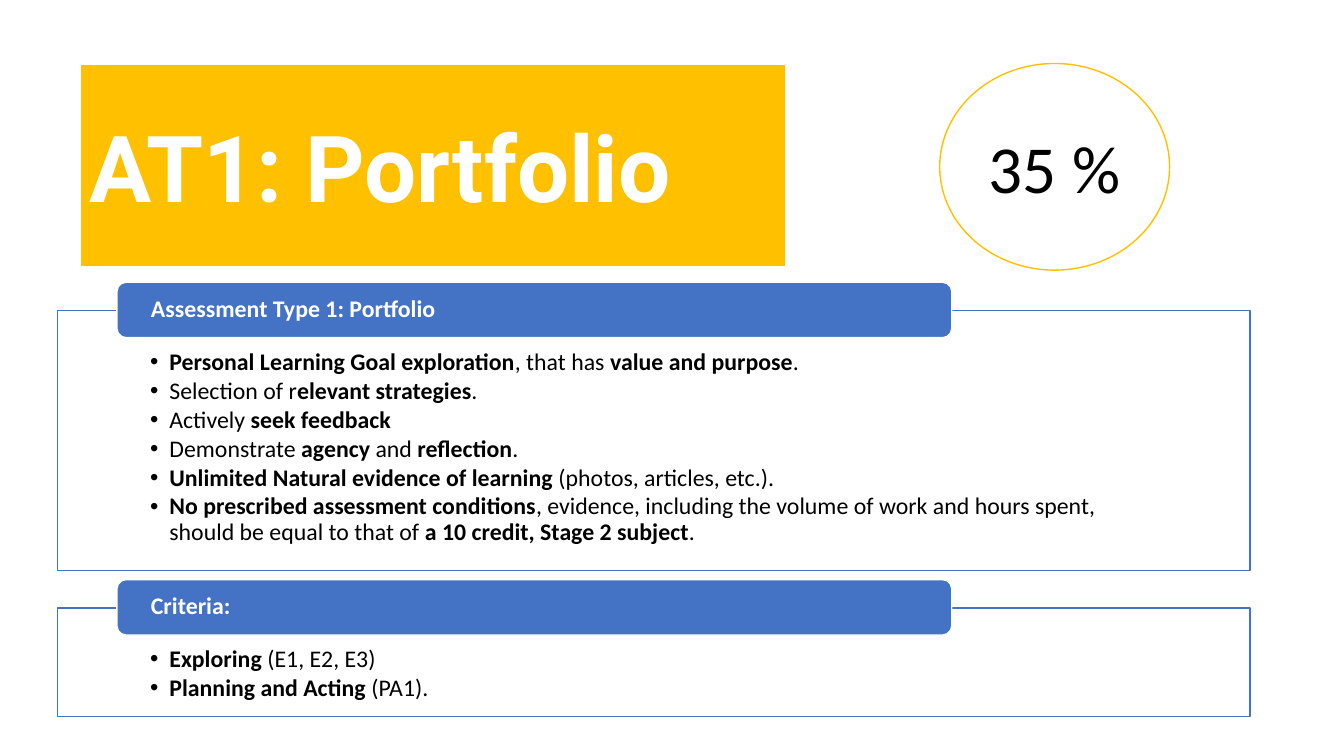
"""Build the slide that presents the portfolio assessment type."""
from dataclasses import dataclass

from lxml import etree
from pptx import Presentation
from pptx import util as u
from pptx.dml.color import RGBColor
from pptx.enum import shapes, text
from pptx.oxml.ns import qn

EMU_PER_PX = 9144
WHITE, BLACK, AMBER, BLUE = "FFFFFF", "000000", "FFC000", "4472C4"
FRAME_LEFT, FRAME_WIDTH = 57, 1183
HEADER_LEFT, HEADER_WIDTH, HEADER_HEIGHT = 116, 828, 55
HEADER_RISE = 28
BULLET_INDENT = 19


@dataclass(frozen=True)
class Section:
    """A framed list under a header; bold parts stand between double asterisks."""
    header: str
    top: int
    height: int
    points: tuple[str, ...]


SECTIONS = (
    Section("Assessment Type 1: Portfolio", 308, 258, (
        "**Personal Learning Goal exploration**, that has** value and purpose**.",
        "Selection of r**elevant strategies**.",
        "Actively **seek feedback**",
        "Demonstrate **agency** and **reflection**.",
        "**Unlimited Natural evidence of learning **(photos, articles, etc.).",
        "**No prescribed assessment conditions**, evidence, including the volume of work "
        "and hours spent, should be equal to that of **a 10 credit, Stage 2 subject**.",
    )),
    Section("Criteria:", 603, 108, (
        "**Exploring** (E1, E2, E3)",
        "**Planning and Acting **(PA1).",
    )),
)


def px(length: int) -> u.Emu:
    """Turn px, a hundred to the inch, into EMU."""
    return u.Emu(length * EMU_PER_PX)


def paint(shape, fill: str, line: str, width: float = 1) -> None:
    """Set the fill and outline of a shape."""
    shape.fill.solid()
    shape.fill.fore_color.rgb = RGBColor.from_string(fill)
    shape.line.color.rgb = RGBColor.from_string(line)
    shape.line.width = u.Pt(width)


def add_box(slide, kind, left: int, top: int, width: int, height: int, fill: str, line: str):
    """Add a preset shape without a shadow."""
    shape = slide.shapes.add_shape(kind, px(left), px(top), px(width), px(height))
    shape.shadow.inherit = False
    paint(shape, fill, line)
    return shape


def add_bullet(paragraph) -> None:
    """Give a paragraph a hanging bullet."""
    properties = paragraph._p.get_or_add_pPr()
    properties.set("marL", str(px(BULLET_INDENT)))
    properties.set("indent", str(px(-BULLET_INDENT)))
    etree.SubElement(properties, qn("a:buFont"), typeface="Arial")
    etree.SubElement(properties, qn("a:buChar"), char="•")


def write(shape, lines: tuple[str, ...], *, size: float, color: str, font: str = "Calibri",
          align=text.PP_ALIGN.LEFT, anchor=text.MSO_ANCHOR.MIDDLE,
          insets: tuple[int, int, int, int] = (10, 5, 10, 5),
          spacing: float = 1, after: float = 0, bullets: bool = False) -> None:
    """Write one paragraph per line, with marked parts in bold."""
    frame = shape.text_frame
    frame.word_wrap = True
    frame.auto_size = text.MSO_AUTO_SIZE.NONE
    frame.vertical_anchor = anchor
    frame.margin_left, frame.margin_top, frame.margin_right, frame.margin_bottom = map(px, insets)
    for index, line in enumerate(lines):
        paragraph = frame.add_paragraph() if index else frame.paragraphs[0]
        paragraph.alignment = align
        paragraph.line_spacing = spacing
        paragraph.space_after = u.Pt(after)
        if bullets:
            add_bullet(paragraph)
        for part, words in enumerate(line.split("**")):
            if words:
                run = paragraph.add_run()
                run.text = words
                run.font.name = font
                run.font.size = u.Pt(size)
                run.font.bold = part % 2 == 1
                run.font.color.rgb = RGBColor.from_string(color)


def format_title(title) -> None:
    """Turn the title placeholder into the arrow-shaped banner."""
    title.left, title.top, title.width, title.height = map(px, (79, 63, 701, 202))
    geometry = etree.SubElement(title.element.spPr, qn("a:prstGeom"), prst="homePlate")
    etree.SubElement(geometry, qn("a:avLst"))
    paint(title, AMBER, WHITE, 1.5)
    write(title, ("**AT1: Portfolio**",), size=66, color=WHITE, font="Roboto")


def add_section(slide, section: Section) -> None:
    """Add a framed bullet list and the header on its top edge."""
    frame = add_box(slide, shapes.MSO_SHAPE.RECTANGLE, FRAME_LEFT, section.top,
                    FRAME_WIDTH, section.height, WHITE, BLUE)
    write(frame, section.points, size=17, color=BLACK, anchor=text.MSO_ANCHOR.TOP,
          insets=(92, 39, 92, 13), spacing=0.9, after=2.3, bullets=True)
    header = add_box(slide, shapes.MSO_SHAPE.ROUNDED_RECTANGLE, HEADER_LEFT,
                     section.top - HEADER_RISE, HEADER_WIDTH, HEADER_HEIGHT, BLUE, WHITE)
    write(header, (f"**{section.header}**",), size=17, color=WHITE,
          insets=(31, 0, 31, 0), spacing=0.9)


def main() -> None:
    """Build and save the presentation."""
    presentation = Presentation()
    presentation.slide_width, presentation.slide_height = u.Inches(13.33), u.Inches(7.5)
    slide = presentation.slides.add_slide(presentation.slide_layouts.get_by_name("Title Only"))
    format_title(slide.shapes.title)
    weight = add_box(slide, shapes.MSO_SHAPE.OVAL, 932, 63, 228, 205, WHITE, AMBER)
    write(weight, ("35 %",), size=48, color=BLACK, align=text.PP_ALIGN.CENTER)
    for section in SECTIONS:
        add_section(slide, section)
    presentation.save("out.pptx")


if __name__ == "__main__":
    main()
